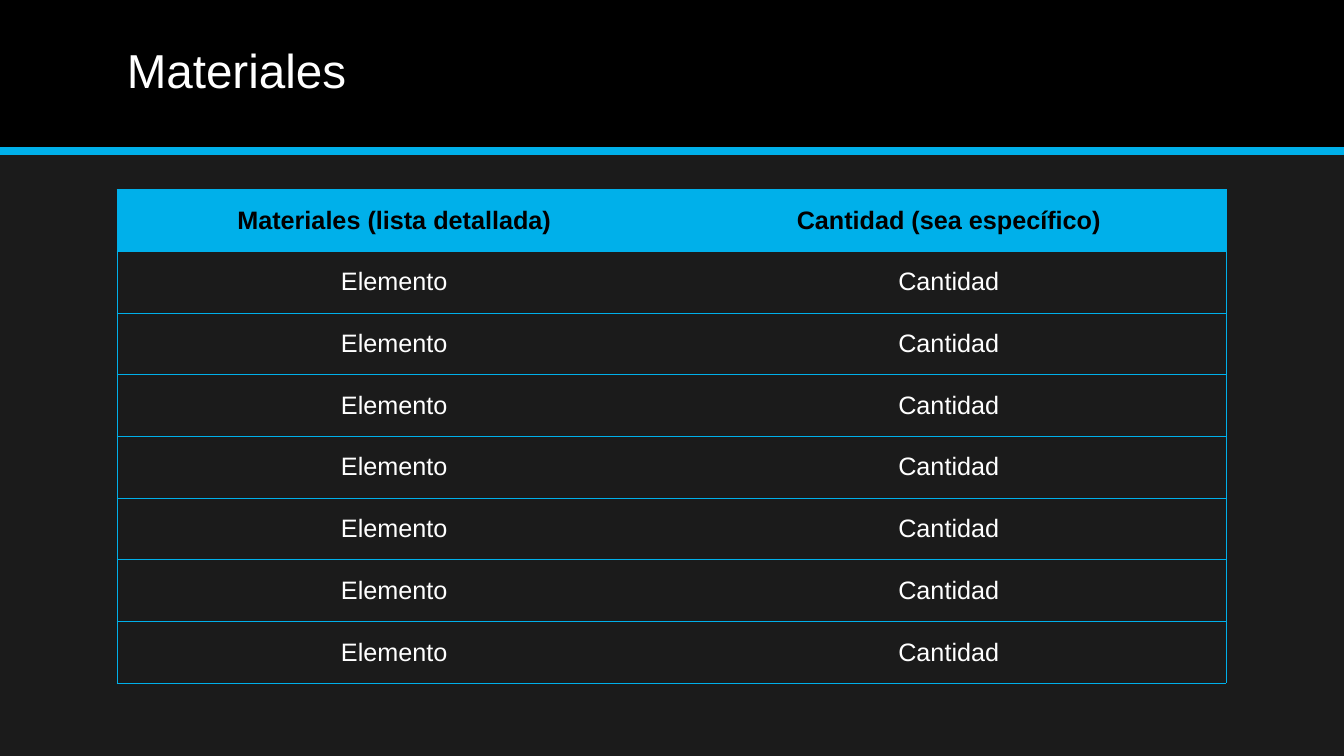
"""Build the materials list slide."""
from dataclasses import dataclass

from lxml.etree import SubElement
from pptx import Presentation
from pptx.dml.color import RGBColor
from pptx.enum.shapes import MSO_CONNECTOR, MSO_SHAPE
from pptx.enum.text import MSO_ANCHOR, PP_ALIGN
from pptx.oxml.ns import qn
from pptx.util import Inches, Pt

TITLE = "Materiales"
HEADER = ("Materiales (lista detallada)", "Cantidad (sea específico)")
ROWS = [HEADER] + [("Elemento", "Cantidad")] * 7

SLIDE_WIDTH, SLIDE_HEIGHT = 13.33, 7.5
BAND_HEIGHT = 1.5
LEFT, CONTENT_WIDTH = 1.16, 11
TITLE_TOP, TITLE_HEIGHT = 0.13, 1.2
TABLE_TOP, TABLE_HEIGHT = 1.88, 4.9
PLAIN_TABLE_STYLE = "{2D5ABB26-0587-4C30-8999-92F81FD0307C}"


@dataclass(frozen=True)
class Theme:
    """Colours, font and sizes."""
    background: str = "1B1B1B"
    band: str = "000000"
    accent: str = "00B0EA"
    light: str = "FFFFFF"
    dark: str = "000000"
    font: str = "Arial"
    title_size: int = 34
    table_size: int = 18
    rule_width: float = 6
    border_width: float = 0.5


THEME = Theme()


def paint(fill, color):
    fill.solid()
    fill.fore_color.rgb = RGBColor.from_string(color)


def style_text(paragraph, size, color, bold=False):
    for run in paragraph.runs:
        run.font.name = THEME.font
        run.font.size = Pt(size)
        run.font.bold = bold
        run.font.color.rgb = RGBColor.from_string(color)


def add_borders(cell, sides):
    properties = cell._tc.get_or_add_tcPr()
    for side in sides:
        line = SubElement(properties, qn(f"a:ln{side}"), w=str(Pt(THEME.border_width)))
        fill = SubElement(line, qn("a:solidFill"))
        SubElement(fill, qn("a:srgbClr"), val=THEME.accent)


def add_header_band(slide):
    band = slide.shapes.add_shape(
        MSO_SHAPE.RECTANGLE, 0, 0, Inches(SLIDE_WIDTH), Inches(BAND_HEIGHT))
    band.shadow.inherit = False
    paint(band.fill, THEME.band)
    band.line.fill.background()

    rule = slide.shapes.add_connector(
        MSO_CONNECTOR.STRAIGHT, 0, Inches(BAND_HEIGHT),
        Inches(SLIDE_WIDTH), Inches(BAND_HEIGHT))
    rule.line.width = Pt(THEME.rule_width)
    rule.line.color.rgb = RGBColor.from_string(THEME.accent)
    SubElement(rule._element.spPr, qn("a:effectLst"))


def add_title(slide):
    title = slide.shapes.add_textbox(
        Inches(LEFT), Inches(TITLE_TOP), Inches(CONTENT_WIDTH), Inches(TITLE_HEIGHT))
    text_frame = title.text_frame
    text_frame.word_wrap = True
    text_frame.vertical_anchor = MSO_ANCHOR.MIDDLE
    text_frame.text = TITLE
    paragraph = text_frame.paragraphs[0]
    paragraph.line_spacing = 0.9
    style_text(paragraph, THEME.title_size, THEME.light)


def add_materials_table(slide):
    frame = slide.shapes.add_table(
        len(ROWS), len(HEADER), Inches(LEFT), Inches(TABLE_TOP),
        Inches(CONTENT_WIDTH), Inches(TABLE_HEIGHT))
    table = frame.table
    table.horz_banding = False
    table._tbl.tblPr.find(qn("a:tableStyleId")).text = PLAIN_TABLE_STYLE
    for row_index, row in enumerate(ROWS):
        is_header = row_index == 0
        for column_index, text in enumerate(row):
            cell = table.cell(row_index, column_index)
            cell.text_frame.text = text
            cell.vertical_anchor = MSO_ANCHOR.MIDDLE
            paragraph = cell.text_frame.paragraphs[0]
            paragraph.alignment = PP_ALIGN.CENTER
            color = THEME.dark if is_header else THEME.light
            style_text(paragraph, THEME.table_size, color, is_header)
            add_borders(cell, ("LTB", "RTB")[column_index])
            if is_header:
                paint(cell.fill, THEME.accent)
            else:
                cell.fill.background()


def main():
    presentation = Presentation()
    presentation.slide_width = Inches(SLIDE_WIDTH)
    presentation.slide_height = Inches(SLIDE_HEIGHT)
    slide = presentation.slides.add_slide(presentation.slide_layouts[6])
    paint(slide.background.fill, THEME.background)
    add_header_band(slide)
    add_title(slide)
    add_materials_table(slide)
    presentation.save("out.pptx")


if __name__ == "__main__":
    main()
